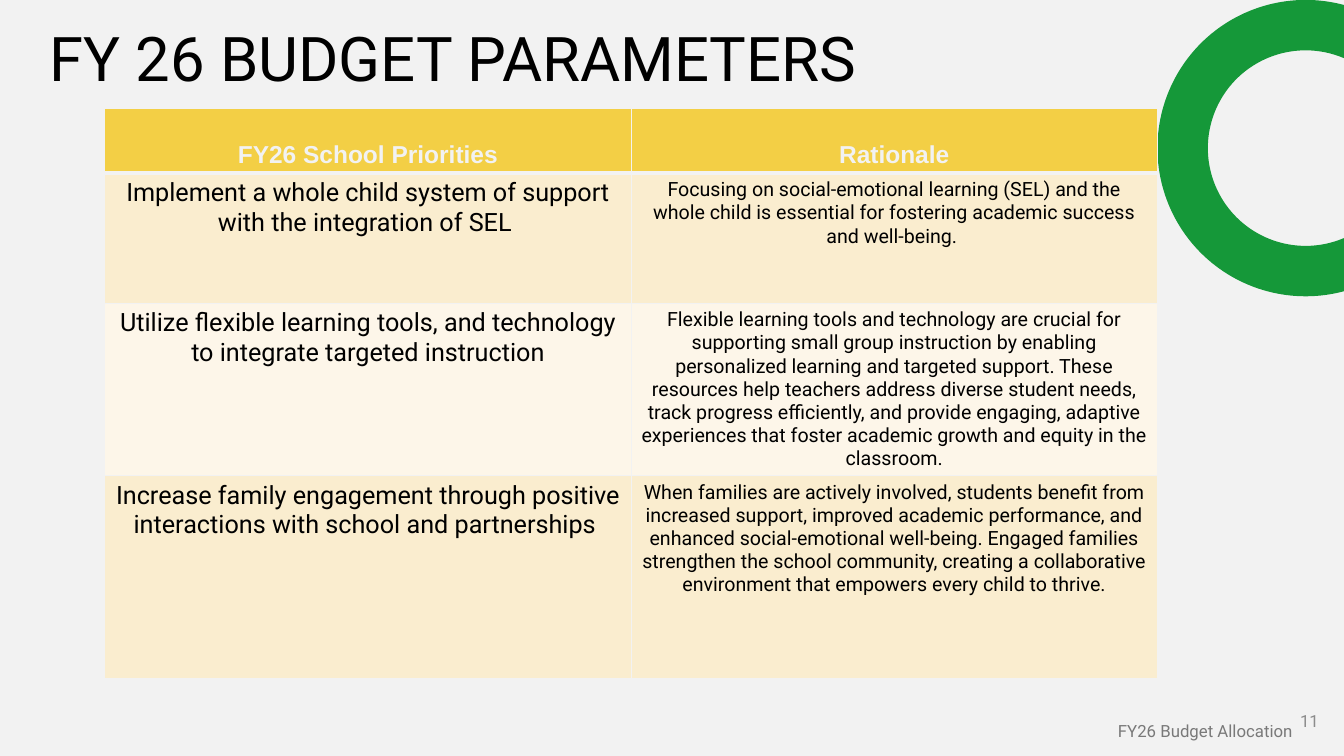
import math

import pptx
import pptx.dml.color
import pptx.enum.text
import pptx.oxml
import pptx.oxml.ns
import pptx.util
from pptx.util import Inches

TITLE = "FY 26 BUDGET PARAMETERS"
HEADER = ("FY26 School Priorities", "Rationale")
PRIORITIES = [
    ("Implement a whole child system of support with the integration of SEL ",
     "Focusing on social-emotional learning (SEL) and the whole child is essential for "
     "fostering academic success and well-being. "),
    ("Utilize flexible learning tools, and technology to integrate targeted instruction",
     "Flexible learning tools and technology are crucial for supporting small group "
     "instruction by enabling personalized learning and targeted support. These resources "
     "help teachers address diverse student needs, track progress efficiently, and provide "
     "engaging, adaptive experiences that foster academic growth and equity in the classroom."),
    ("Increase family engagement through positive interactions with school and partnerships ",
     "When families are actively involved, students benefit from increased support, improved "
     "academic performance, and enhanced social-emotional well-being. Engaged families "
     "strengthen the school community, creating a collaborative environment that empowers "
     "every child to thrive."),
]

THEME = {
    "paper": "F2F2F2", "ink": "000000", "ring": "159839", "header": "F3CF45",
    "bands": ("FAEDCF", "FDF6E9"), "number": "8C8C8C", "footer": "797979",
    "font": "Roboto", "header_font": "Arial",
    "title_pt": 44, "header_pt": 17.5, "body_pt": (18, 14), "footer_pt": 12,
}
WIDTH, HEIGHT = 13.33, 7.5
TABLE_LEFT, TABLE_TOP, COLUMN = 1.04, 1.08, 5.22
ROWS = (0.64, 1.29, 1.71, 2.01)
RING_X, RING_Y, RING_OUTER, RING_INNER = 12.95, 1.47, 1.47, 0.97

ALIGN = pptx.enum.text.PP_ALIGN
ANCHOR = pptx.enum.text.MSO_ANCHOR


def rgb(value):
    return pptx.dml.color.RGBColor.from_string(value)


def fill(target, color):
    target.fill.solid()
    target.fill.fore_color.rgb = rgb(color)


def write(tf, text, size, color, align, font=THEME["font"], bold=False):
    tf.text = text
    tf.word_wrap = True
    p = tf.paragraphs[0]
    p.alignment = align
    f = p.runs[0].font
    f.name, f.size, f.bold = font, pptx.util.Pt(size), bold
    f.color.rgb = rgb(color)
    return p


def border(cell, bottom):
    """Line all four cell sides, with the given width in points below."""
    tc_pr = cell._tc.get_or_add_tcPr()
    for i, (side, width) in enumerate((("L", 1), ("R", 1), ("T", 1), ("B", bottom))):
        tc_pr.insert(i, pptx.oxml.parse_xml(
            f'<a:ln{side} {pptx.oxml.ns.nsdecls("a")} w="{pptx.util.Pt(width)}"><a:solidFill>'
            f'<a:srgbClr val="{THEME["paper"]}"/></a:solidFill></a:ln{side}>'))


def arc(command, radius, side):
    """Go to the circle's crossing with the slide edge (side -1 top, 1 bottom), then round it."""
    angle = math.acos((WIDTH - RING_X) / radius)
    x = Inches(WIDTH - RING_X + RING_OUTER)
    y = Inches(RING_Y + side * radius * math.sin(angle))
    start = round(math.degrees(side * angle) % 360 * 60000)
    sweep = round(side * (360 - 2 * math.degrees(angle)) * 60000)
    return (f'<a:{command}><a:pt x="{x}" y="{y}"/></a:{command}>'
            f'<a:arcTo wR="{Inches(radius)}" hR="{Inches(radius)}" '
            f'stAng="{start}" swAng="{sweep}"/>')


def add_ring(s):
    """Draw the ring as two arcs that end at the slide's right edge."""
    left, right = Inches(RING_X - RING_OUTER), Inches(WIDTH)
    bottom = Inches(RING_Y + RING_OUTER)
    builder = s.shapes.build_freeform(left, 0)
    builder.add_line_segments([(right, 0), (right, bottom), (left, bottom)])
    sp = builder.convert_to_shape()
    outline = sp._element.find(".//" + pptx.oxml.ns.qn("a:path"))
    arcs = pptx.oxml.parse_xml(
        f'<a:path {pptx.oxml.ns.nsdecls("a")} w="{right - left}" h="{bottom}">'
        f'{arc("moveTo", RING_OUTER, -1)}{arc("lnTo", RING_INNER, 1)}<a:close/></a:path>')
    outline.getparent().replace(outline, arcs)
    sp.shadow.inherit = False
    fill(sp, THEME["ring"])
    sp.line.fill.background()


def add_title(s):
    sp = s.shapes.title
    sp.left, sp.top, sp.width, sp.height = map(Inches, (0.49, 0.24, 8.49, 0.75))
    tf = sp.text_frame
    p = write(tf, TITLE, THEME["title_pt"], THEME["ink"], ALIGN.LEFT)
    p.line_spacing = 0.9
    tf.vertical_anchor = ANCHOR.MIDDLE
    tf.margin_left = tf.margin_right = tf.margin_top = tf.margin_bottom = 0


def add_table(s):
    table = s.shapes.add_table(
        len(ROWS), len(HEADER), Inches(TABLE_LEFT), Inches(TABLE_TOP),
        Inches(COLUMN * len(HEADER)), Inches(sum(ROWS))).table
    for row, height in zip(table.rows, ROWS):
        row.height = Inches(height)
    for r, texts in enumerate([HEADER] + PRIORITIES):
        for c, text in enumerate(texts):
            cell = table.cell(r, c)
            if r == 0:
                write(cell.text_frame, text, THEME["header_pt"], THEME["paper"],
                      ALIGN.CENTER, THEME["header_font"], True)
                cell.vertical_anchor = ANCHOR.BOTTOM
                fill(cell, THEME["header"])
            else:
                write(cell.text_frame, text, THEME["body_pt"][c], THEME["ink"], ALIGN.CENTER)
                fill(cell, THEME["bands"][(r - 1) % 2])
            border(cell, 3 if r == 0 else 1)


def add_note(s, text, color, left, top, width):
    tf = s.shapes.add_textbox(*map(Inches, (left, top, width, 0.4))).text_frame
    write(tf, text, THEME["footer_pt"], color, ALIGN.RIGHT)
    tf.vertical_anchor = ANCHOR.MIDDLE


def main():
    prs = pptx.Presentation()
    prs.slide_width, prs.slide_height = Inches(WIDTH), Inches(HEIGHT)
    s = prs.slides.add_slide(prs.slide_layouts[5])
    fill(s.background, THEME["paper"])
    add_ring(s)
    add_title(s)
    add_table(s)
    add_note(s, "11", THEME["number"], 10.18, 6.95, 3)
    add_note(s, "FY26 Budget Allocation", THEME["footer"], 10.79, 7.05, 2.13)
    prs.save("out.pptx")


if __name__ == "__main__":
    main()
